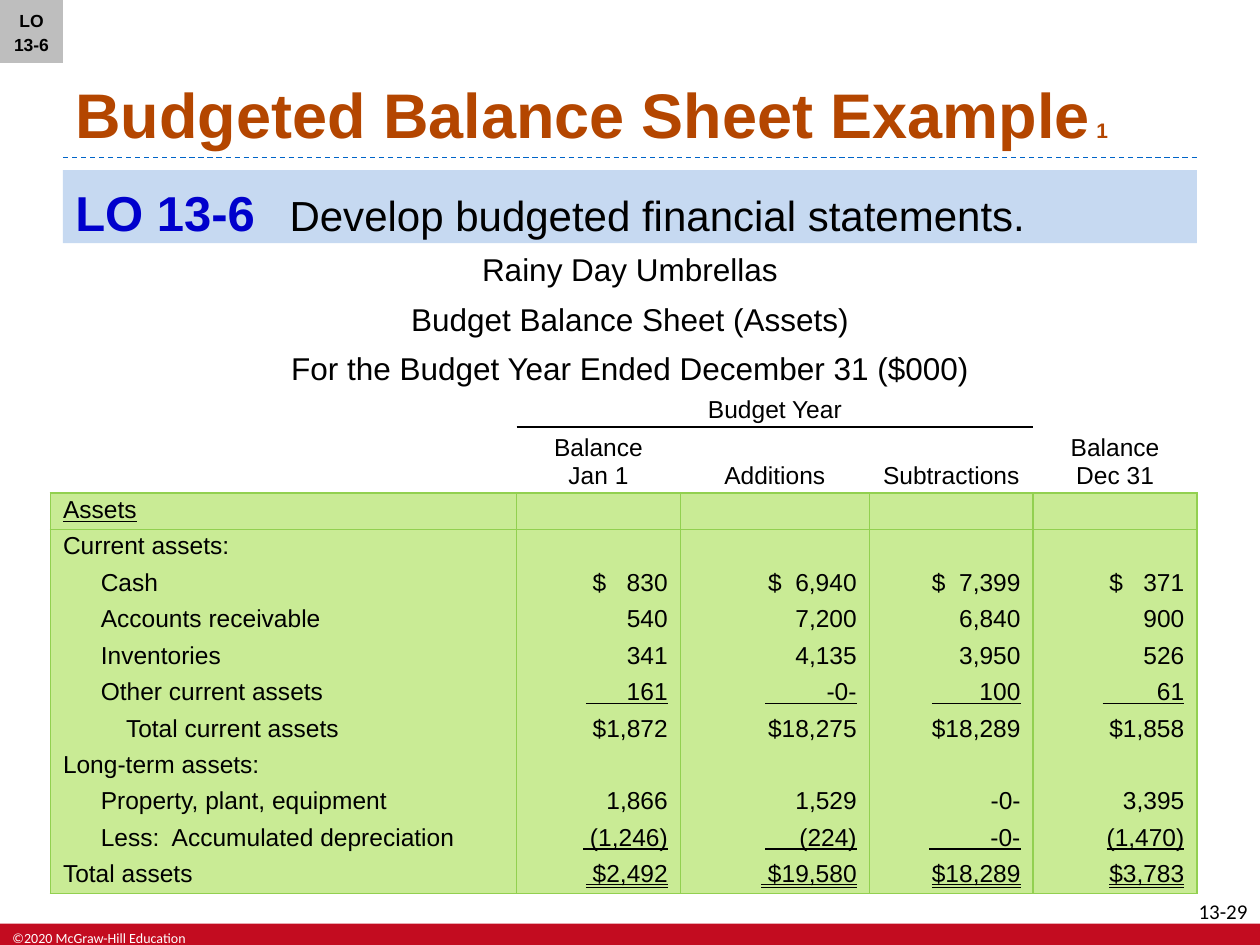
import pptx
import pptx.dml.color
import pptx.enum.dml
import pptx.enum.shapes
import pptx.enum.text
import pptx.oxml.ns
import pptx.util
import lxml.etree

Inches = pptx.util.Inches
Pt = pptx.util.Pt
Align = pptx.enum.text.PP_ALIGN
Anchor = pptx.enum.text.MSO_ANCHOR
Underline = pptx.enum.text.MSO_UNDERLINE
qn = pptx.oxml.ns.qn

BLACK, WHITE = "000000", "FFFFFF"
CELL_FILL, CELL_EDGE = "C9EB95", "92D050"
NO_GRID_STYLE = "{2D5ABB26-0587-4C30-8999-92F81FD0307C}"


def color(value):
    return pptx.dml.color.RGBColor.from_string(value)


class BudgetSlide:
    font = "Arial"
    table_size = 14

    def __init__(self, slide):
        self.slide = slide

    def run(self, paragraph, text, size, ink=BLACK, bold=False, underline=None, font=None):
        run = paragraph.add_run()
        run.text = text
        run.font.name = font or self.font
        run.font.size = Pt(size)
        run.font.bold = bold
        run.font.underline = underline
        run.font.color.rgb = color(ink)

    def text(self, box, anchor=Anchor.TOP, align=Align.LEFT):
        frame = box.text_frame
        frame.word_wrap = True
        frame.vertical_anchor = anchor
        frame.paragraphs[0].alignment = align
        return frame

    def label(self, left, top, width, height, **layout):
        box = self.slide.shapes.add_textbox(
            Inches(left), Inches(top), Inches(width), Inches(height))
        return self.text(box, **layout)

    def band(self, left, top, width, height, fill, **layout):
        box = self.slide.shapes.add_shape(
            pptx.enum.shapes.MSO_SHAPE.RECTANGLE,
            Inches(left), Inches(top), Inches(width), Inches(height))
        box.shadow.inherit = False
        box.fill.solid()
        box.fill.fore_color.rgb = color(fill)
        box.line.fill.background()
        return self.text(box, **layout)

    def dashed_rule(self, left, right, top, ink):
        rule = self.slide.shapes.add_connector(
            pptx.enum.shapes.MSO_CONNECTOR.STRAIGHT,
            Inches(left), Inches(top), Inches(right), Inches(top))
        rule.line.color.rgb = color(ink)
        rule.line.width = Pt(0.75)
        rule.line.dash_style = pptx.enum.dml.MSO_LINE.DASH
        lxml.etree.SubElement(rule._element.spPr, qn("a:effectLst"))

    def table(self, left, top, widths, heights):
        frame = self.slide.shapes.add_table(
            len(heights), len(widths), Inches(left), Inches(top),
            Inches(sum(widths)), Inches(sum(heights)))
        table = frame.table
        table.first_row = table.horz_banding = False
        table._tbl.tblPr.find(qn("a:tableStyleId")).text = NO_GRID_STYLE
        for column, width in zip(table.columns, widths):
            column.width = Inches(width)
        for row, height in zip(table.rows, heights):
            row.height = Inches(height)
        return table

    def cell(self, cell, text, align, indent=0, underline=None, fill=None, edges=None):
        cell.margin_top = cell.margin_bottom = Pt(2)
        cell.vertical_anchor = Anchor.TOP if fill else Anchor.BOTTOM
        for number, line in enumerate(text.split("\n")):
            frame = cell.text_frame
            paragraph = frame.add_paragraph() if number else frame.paragraphs[0]
            paragraph.alignment = align
            if indent:
                paragraph._p.get_or_add_pPr().set("marL", str(Inches(indent)))
            if line:
                self.run(paragraph, line, self.table_size, underline=underline)
            else:
                end = lxml.etree.SubElement(paragraph._p, qn("a:endParaRPr"))
                end.set("sz", str(self.table_size * 100))
        properties = cell._tc.get_or_add_tcPr()
        for side in "LRTB":
            if side in (edges or {}):
                line = lxml.etree.SubElement(properties, qn(f"a:ln{side}"), w=str(Pt(1)))
                solid = lxml.etree.SubElement(line, qn("a:solidFill"))
                lxml.etree.SubElement(solid, qn("a:srgbClr"), val=edges[side])
        if fill:
            cell.fill.solid()
            cell.fill.fore_color.rgb = color(fill)
        else:
            cell.fill.background()


HEADINGS = [
    ["", "", "Budget Year", "", ""],
    ["", "Balance\nJan 1", "Additions", "Subtractions", "Balance\nDec 31"],
]
SINGLE, DOUBLE = Underline.SINGLE_LINE, Underline.DOUBLE_LINE
BLANK = [""] * 4
ASSETS = [
    ("Assets", 0, None, BLANK),
    ("Current assets:", 0, None, BLANK),
    ("Cash", 0.3, None, ["$   830", "$  6,940", "$  7,399", "$   371"]),
    ("Accounts receivable", 0.3, None, ["540", "7,200", "6,840", "900"]),
    ("Inventories", 0.3, None, ["341", "4,135", "3,950", "526"]),
    ("Other current assets", 0.3, SINGLE,
     ["      161", "         -0-", "       100", "        61"]),
    ("Total current assets", 0.5, None, ["$1,872", "$18,275", "$18,289", "$1,858"]),
    ("Long-term assets:", 0, None, BLANK),
    ("Property, plant, equipment", 0.3, None, ["1,866", "1,529", "-0-", "3,395"]),
    ("Less:  Accumulated depreciation", 0.3, SINGLE,
     [" (1,246)", "     (224)", "         -0-", "(1,470)"]),
    ("Total assets", 0, DOUBLE, [" $2,492", " $19,580", "$18,289", "$3,783"]),
]


def add_balance_sheet(page):
    heights = [0.28, 0.5] + [0.28] * len(ASSETS)
    sheet = page.table(0.4, 3.1, [3.7, 1.3, 1.5, 1.3, 1.3], heights)
    for row, headings in enumerate(HEADINGS):
        for column, heading in enumerate(headings):
            if row == 1:
                edges = {"B": CELL_EDGE}
            else:
                edges = {"B": BLACK} if 1 <= column <= 3 else {}
            page.cell(sheet.cell(row, column), heading, Align.CENTER, edges=edges)
    for row, (name, indent, underline, amounts) in enumerate(ASSETS, len(HEADINGS)):
        sides = "LR"
        if row == len(HEADINGS):
            sides += "T"
        if row == len(heights) - 1:
            sides += "B"
        body = {"fill": CELL_FILL, "edges": dict.fromkeys(sides, CELL_EDGE)}
        page.cell(sheet.cell(row, 0), name, Align.LEFT, indent,
                  SINGLE if name == "Assets" else None, **body)
        for column, amount in enumerate(amounts, 1):
            page.cell(sheet.cell(row, column), amount, Align.RIGHT,
                      underline=underline, **body)


def main():
    deck = pptx.Presentation()
    deck.slide_width, deck.slide_height = Inches(10), Inches(7.5)
    page = BudgetSlide(deck.slides.add_slide(deck.slide_layouts[6]))

    page.band(0, 7.33, 10, 0.17, "C30C20")
    copyright_line = page.label(0, 7.33, 1.6, 0.17).paragraphs[0]
    page.run(copyright_line, "©2020 McGraw-Hill Education", 8, WHITE, font="Calibri")
    page_number = page.label(9.3, 7.08, 0.7, 0.2, align=Align.RIGHT).paragraphs[0]
    page.run(page_number, "13-29", 12, font="Calibri")
    page.dashed_rule(0.5, 9.5, 1.25, "0064C8")

    title = page.label(0.5, 0.05, 9, 1.2, anchor=Anchor.BOTTOM).paragraphs[0]
    page.run(title, "Budgeted Balance Sheet Example", 36, "B44600", bold=True)
    page.run(title, " 1", 12, "B44600", bold=True)

    objective = page.band(0.5, 1.35, 9, 0.58, "C6D9F1").paragraphs[0]
    indents = objective._p.get_or_add_pPr()
    indents.set("marL", str(Inches(1.7)))
    indents.set("indent", str(Inches(-1.7)))
    objective.line_spacing = 1.1
    page.run(objective, "LO 13-6\t", 28, "0000CC", bold=True)
    page.run(objective, "Develop budgeted financial statements.", 24)

    heading = page.label(0.5, 1.93, 9, 1.17)
    for number, line in enumerate([
            "Rainy Day Umbrellas",
            "Budget Balance Sheet (Assets)",
            "For the Budget Year Ended December 31 ($000)"]):
        paragraph = heading.add_paragraph() if number else heading.paragraphs[0]
        paragraph.alignment = Align.CENTER
        paragraph.line_spacing = 1.03
        paragraph.space_after = Pt(6)
        page.run(paragraph, line, 18)

    add_balance_sheet(page)

    badge = page.band(0, 0, 0.5, 0.5, "BEBEBE", anchor=Anchor.MIDDLE, align=Align.CENTER)
    badge.margin_left = badge.margin_right = Inches(0.05)
    badge.paragraphs[0].line_spacing = 1.1
    page.run(badge.paragraphs[0], "LO 13-6", 10, bold=True)

    deck.save("out.pptx")


if __name__ == "__main__":
    main()
